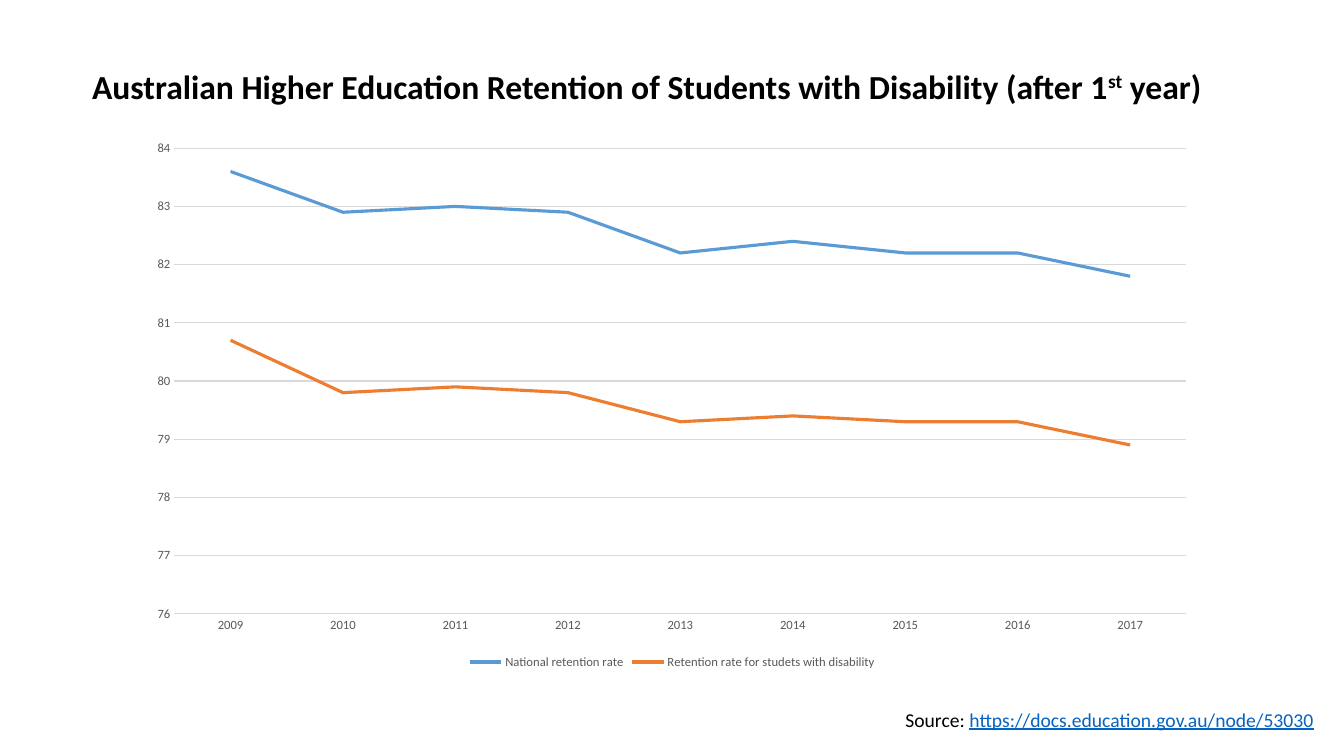
from dataclasses import dataclass

import pptx
import pptx.chart.data
import pptx.dml.color
import pptx.enum.chart
import pptx.enum.text
import pptx.util

Inches = pptx.util.Inches
Pt = pptx.util.Pt
RGB = pptx.dml.color.RGBColor.from_string
ALIGN = pptx.enum.text.PP_ALIGN


@dataclass(frozen=True)
class Theme:
    font: str = "Calibri"
    background: str = "FFFFFF"
    text: str = "000000"
    link: str = "0563C1"
    axis_text: str = "595959"
    grid: str = "D9D9D9"
    national: str = "5B9BD5"
    disability: str = "ED7D31"
    title_size: int = 24
    source_size: int = 14
    chart_size: int = 10
    axis_size: int = 9
    grid_width: float = 0.75
    series_width: float = 2.25


theme = Theme()


def style_font(font, size, color):
    font.name = theme.font
    font.size = Pt(size)
    font.color.rgb = RGB(color)


def add_text_line(left, top, width, height, alignment, size, texts):
    """Add a one-paragraph text box and return its runs, one per text."""
    box = slide.shapes.add_textbox(Inches(left), Inches(top), Inches(width), Inches(height))
    box.text_frame.word_wrap = True
    paragraph = box.text_frame.paragraphs[0]
    paragraph.alignment = alignment
    runs = []
    for text in texts:
        run = paragraph.add_run()
        run.text = text
        style_font(run.font, size, theme.text)
        runs.append(run)
    return runs


presentation = pptx.Presentation()
presentation.slide_width = Inches(13.33)
presentation.slide_height = Inches(7.5)
slide = presentation.slides.add_slide(presentation.slide_layouts[6])
slide.background.fill.solid()
slide.background.fill.fore_color.rgb = RGB(theme.background)

# Title
title_runs = add_text_line(
    0.45, 0.6, 11.93, 0.5, ALIGN.CENTER, theme.title_size,
    ["Australian Higher Education Retention of Students with Disability (after 1", "st", " year)"],
)
for run in title_runs:
    run.font.bold = True
title_runs[1].font._element.set("baseline", "30000")

# Retention chart
retention_series = [
    ("National retention rate", theme.national,
     [83.6, 82.9, 83.0, 82.9, 82.2, 82.4, 82.2, 82.2, 81.8]),
    ("Retention rate for studets with disability", theme.disability,
     [80.7, 79.8, 79.9, 79.8, 79.3, 79.4, 79.3, 79.3, 78.9]),
]
chart_data = pptx.chart.data.CategoryChartData()
chart_data.categories = [str(year) for year in range(2009, 2018)]
for name, color, rates in retention_series:
    chart_data.add_series(name, rates)

chart = slide.shapes.add_chart(
    pptx.enum.chart.XL_CHART_TYPE.LINE,
    Inches(1.35), Inches(1.29), Inches(10.63), Inches(5.39), chart_data,
).chart
chart.has_title = False
style_font(chart.font, theme.chart_size, theme.text)
chart.plots[0].vary_by_categories = False

for series, (name, color, rates) in zip(chart.plots[0].series, retention_series):
    series.smooth = False
    series.marker.style = pptx.enum.chart.XL_MARKER_STYLE.NONE
    series.format.line.color.rgb = RGB(color)
    series.format.line.width = Pt(theme.series_width)

year_axis, rate_axis = chart.category_axis, chart.value_axis
for axis in (year_axis, rate_axis):
    axis.major_tick_mark = pptx.enum.chart.XL_TICK_MARK.NONE
    axis.minor_tick_mark = pptx.enum.chart.XL_TICK_MARK.NONE
    style_font(axis.tick_labels.font, theme.axis_size, theme.axis_text)

rate_axis.minimum_scale = 76
rate_axis.maximum_scale = 84
rate_axis.major_unit = 1
rate_axis.tick_labels.number_format = "0"
rate_axis.tick_labels.number_format_is_linked = False
rate_axis.format.line.fill.background()
rate_axis.has_major_gridlines = True
for line in (year_axis.format.line, rate_axis.major_gridlines.format.line):
    line.color.rgb = RGB(theme.grid)
    line.width = Pt(theme.grid_width)

chart.has_legend = True
chart.legend.position = pptx.enum.chart.XL_LEGEND_POSITION.BOTTOM
chart.legend.include_in_layout = False
style_font(chart.legend.font, theme.axis_size, theme.axis_text)

# Source line
source_label, source_address = add_text_line(
    6.6, 6.97, 6.53, 0.34, ALIGN.RIGHT, theme.source_size,
    ["Source: ", "https://docs.education.gov.au/node/53030"],
)
source_address.font.color.rgb = RGB(theme.link)
source_address.font.underline = True

presentation.save("out.pptx")
